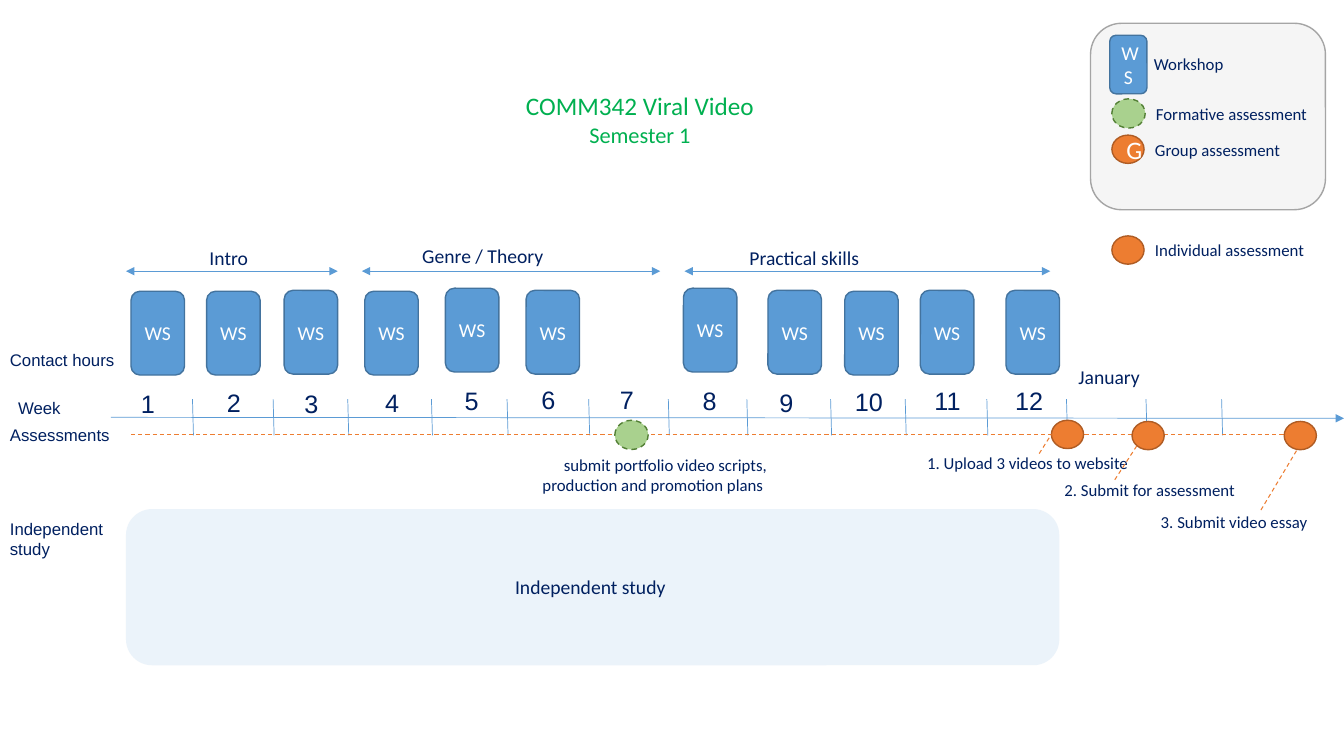
from lxml.etree import SubElement
from pptx import Presentation
from pptx.dml.color import RGBColor
from pptx.enum.dml import MSO_LINE
from pptx.enum.shapes import MSO_CONNECTOR, MSO_SHAPE
from pptx.enum.text import MSO_ANCHOR, MSO_AUTO_SIZE, PP_ALIGN
from pptx.oxml.ns import qn
from pptx.util import Pt

NAVY = RGBColor(0x00, 0x20, 0x60)
WHITE = RGBColor(0xFF, 0xFF, 0xFF)
TITLE_GREEN = RGBColor(0x00, 0xB0, 0x50)
BLUE = RGBColor(0x5B, 0x9B, 0xD5)
BLUE_EDGE = RGBColor(0x43, 0x73, 0x9E)
ORANGE = RGBColor(0xED, 0x7D, 0x31)
ORANGE_EDGE = RGBColor(0xAF, 0x5C, 0x24)
GREEN = RGBColor(0xA9, 0xD1, 0x8E)
GREEN_EDGE = RGBColor(0x53, 0x80, 0x35)
LEGEND_GREY = RGBColor(0xDB, 0xDB, 0xDB)
LEGEND_EDGE = RGBColor(0xA5, 0xA5, 0xA5)
PALE_BLUE = RGBColor(0xDE, 0xEB, 0xF7)
LEFT, CENTER, RIGHT = PP_ALIGN.LEFT, PP_ALIGN.CENTER, PP_ALIGN.RIGHT

# Lengths in points.
TITLE = [("COMM342 Viral Video", 18), ("Semester 1", 16)]
# number left, number top, workshop left, workshop top (None: no workshop)
WEEKS = [
    (93.6, 273.6, 93.6, 208.1), (140.4, 272.9, 147.6, 208.1),
    (195.8, 273.6, 203, 207.4), (253.4, 272.9, 260.6, 208.1),
    (310.3, 271.4, 318.2, 205.9), (365, 270.7, 375.8, 207.4),
    (421.2, 270.7, None, None), (480.2, 271.4, 488.2, 205.9),
    (535, 272.9, 548.6, 207.4), (594, 272.2, 603.4, 208.1),
    (650.2, 271.4, 657.4, 207.4), (708.5, 271.4, 718.6, 207.4),
]
WEEK_ENDS = [137.5, 195.1, 248.4, 308.2, 362.2, 420.5, 477.4, 533.5,
             593.3, 646.6, 704.9, 761.8, 818.6, 872.6]
# name, arrow start, arrow end, label left, label top
PHASES = [("Intro", 90, 241.2, 108.7, 172.1),
          ("Genre / Theory", 258.5, 471.6, 290.2, 170.6),
          ("Practical skills", 488.9, 750.2, 519.8, 172.1)]
# name, left, top, width, height
ROW_LABELS = [("Contact hours", 0, 246.2, 93.6, 21.6),
              ("Week", 5.8, 280.8, 58.3, 21.6),
              ("Assessments", 0, 299.5, 93.6, 21.6),
              ("Independent study", 0, 367.2, 93.6, 36)]
# text, label left, label top, marker left, marker top, leader ends
SUBMISSIONS = [
    ("1. Upload 3 videos to website", 650.9, 319.7, 751, 300.2,
     (742.3, 324, 751, 310.3)),
    ("2. Submit for assessment", 727.2, 339.1, 808.6, 301,
     (796.3, 342.7, 812.2, 318.2)),
    ("3. Submit video essay", 779, 362.2, 917.3, 301,
     (900.7, 364.3, 926.6, 321.1)),
]
FORMATIVE_TASK = "submit portfolio video scripts, production and promotion plans "
# name, left, top, width
LEGEND = [("Workshop", 817.2, 34.6, 100.8),
          ("Formative assessment", 818.6, 70.6, 143.3),
          ("Group assessment", 817.9, 96.5, 121),
          ("Individual assessment", 817.9, 167.8, 147.6)]

deck = Presentation()
deck.slide_width, deck.slide_height = Pt(960), Pt(540)
slide = deck.slides.add_slide(deck.slide_layouts[6])


def style(paragraph, size, color, font, align):
    paragraph.alignment = align
    paragraph.font.size = Pt(size)
    paragraph.font.name = font
    paragraph.font.color.rgb = color


def label(text, left, top, width, height=21.6, size=12, align=LEFT,
          font="Calibri", color=NAVY):
    frame = slide.shapes.add_textbox(
        Pt(left), Pt(top), Pt(width), Pt(height)).text_frame
    frame.word_wrap = True
    frame.auto_size = MSO_AUTO_SIZE.SHAPE_TO_FIT_TEXT
    paragraph = frame.paragraphs[0]
    paragraph.text = text
    style(paragraph, size, color, font, align)
    return paragraph


def shape(kind, left, top, width, height, fill, edge=None, opacity=None,
          text="", size=14, color=WHITE, dash=None):
    body = slide.shapes.add_shape(kind, Pt(left), Pt(top), Pt(width), Pt(height))
    body.shadow.inherit = False
    body.fill.solid()
    body.fill.fore_color.rgb = fill
    if opacity:
        tint = body.fill._xPr.find(qn("a:solidFill"))[0]
        SubElement(tint, qn("a:alpha")).set("val", str(opacity * 1000))
    if edge:
        body.line.color.rgb = edge
        body.line.width = Pt(1)
        body.line.dash_style = dash
    else:
        body.line.fill.background()
    if text:
        body.text_frame.vertical_anchor = MSO_ANCHOR.MIDDLE
        paragraph = body.text_frame.paragraphs[0]
        paragraph.text = text
        style(paragraph, size, color, "Calibri", CENTER)


def workshop(left, top, width=38.2, height=59.8):
    shape(MSO_SHAPE.ROUNDED_RECTANGLE, left, top, width, height,
          BLUE, BLUE_EDGE, text="WS")


def graded_marker(left, top, text=""):
    shape(MSO_SHAPE.OVAL, left, top, 23, 20.2, ORANGE, ORANGE_EDGE,
          text=text, size=18)


def formative_marker(left, top):
    shape(MSO_SHAPE.OVAL, left, top, 23.8, 20.9, GREEN, GREEN_EDGE,
          dash=MSO_LINE.DASH)


def line(x1, y1, x2, y2, color=BLUE, width=0.5, dash=None, arrows=()):
    """Draw a straight line; arrows lists headEnd and/or tailEnd, in that order."""
    rule = slide.shapes.add_connector(
        MSO_CONNECTOR.STRAIGHT, Pt(x1), Pt(y1), Pt(x2), Pt(y2))
    rule.line.color.rgb = color
    rule.line.width = Pt(width)
    rule.line.dash_style = dash
    for end in arrows:
        SubElement(rule.line._get_or_add_ln(), qn("a:" + end)).set("type", "triangle")
    SubElement(rule._element.spPr, qn("a:effectLst"))


def orange_dashes(x1, y1, x2, y2):
    line(x1, y1, x2, y2, ORANGE, 0.75, MSO_LINE.DASH)


# Title
(course, course_size), (semester, semester_size) = TITLE
heading = label(course, 336.2, 61.2, 241.9, 48.2, course_size, CENTER,
                color=TITLE_GREEN)
heading.add_line_break()
semester_run = heading.add_run()
semester_run.text = semester
semester_run.font.size = Pt(semester_size)

# Timeline
line(79.2, 298.1, 960, 298.8, arrows=["tailEnd"])
for x in WEEK_ENDS:
    line(x, 285.1, x + 0.7, 311)
for week, (left, top, workshop_left, workshop_top) in enumerate(WEEKS, 1):
    first = week == 1
    label(str(week), left, top, 38.2 if first else 53.3, 28.8, 18,
          LEFT if first else CENTER, "Arial")
    if workshop_left is not None:
        workshop(workshop_left, workshop_top)
label("January", 763.2, 257, 90.7, 24.5, 14)
for name, left, top, width, height in ROW_LABELS:
    label(name, left, top, width, height, font="Arial")
for name, start, end, left, top in PHASES:
    line(start, 193.7, end, 193.7, arrows=["headEnd", "tailEnd"])
    label(name, left, top, 109.4, 24.5, 14, CENTER)

# Assessments
orange_dashes(93.6, 310.3, 935.3, 310.3)
for task, left, top, marker_left, marker_top, leader in SUBMISSIONS:
    graded_marker(marker_left, marker_top)
    label(task, left, top, 162, align=RIGHT)
    orange_dashes(*leader)
formative_marker(439.2, 300.2)
label(FORMATIVE_TASK, 357.8, 321.1, 197.3, 36, align=RIGHT)

# Independent study
shape(MSO_SHAPE.ROUNDED_RECTANGLE, 90, 363.6, 666.7, 111.6, PALE_BLUE,
      opacity=59, text="Independent study ", color=NAVY)

# Legend
shape(MSO_SHAPE.ROUNDED_RECTANGLE, 779, 16.6, 167.8, 133.2,
      LEGEND_GREY, LEGEND_EDGE, opacity=26)
workshop(792.7, 25.2, 26.6, 41.8)
formative_marker(794.2, 70.6)
graded_marker(794.2, 96.5, "G")
graded_marker(794.2, 168.5)
for name, left, top, width in LEGEND:
    label(name, left, top, width)

deck.save("out.pptx")
